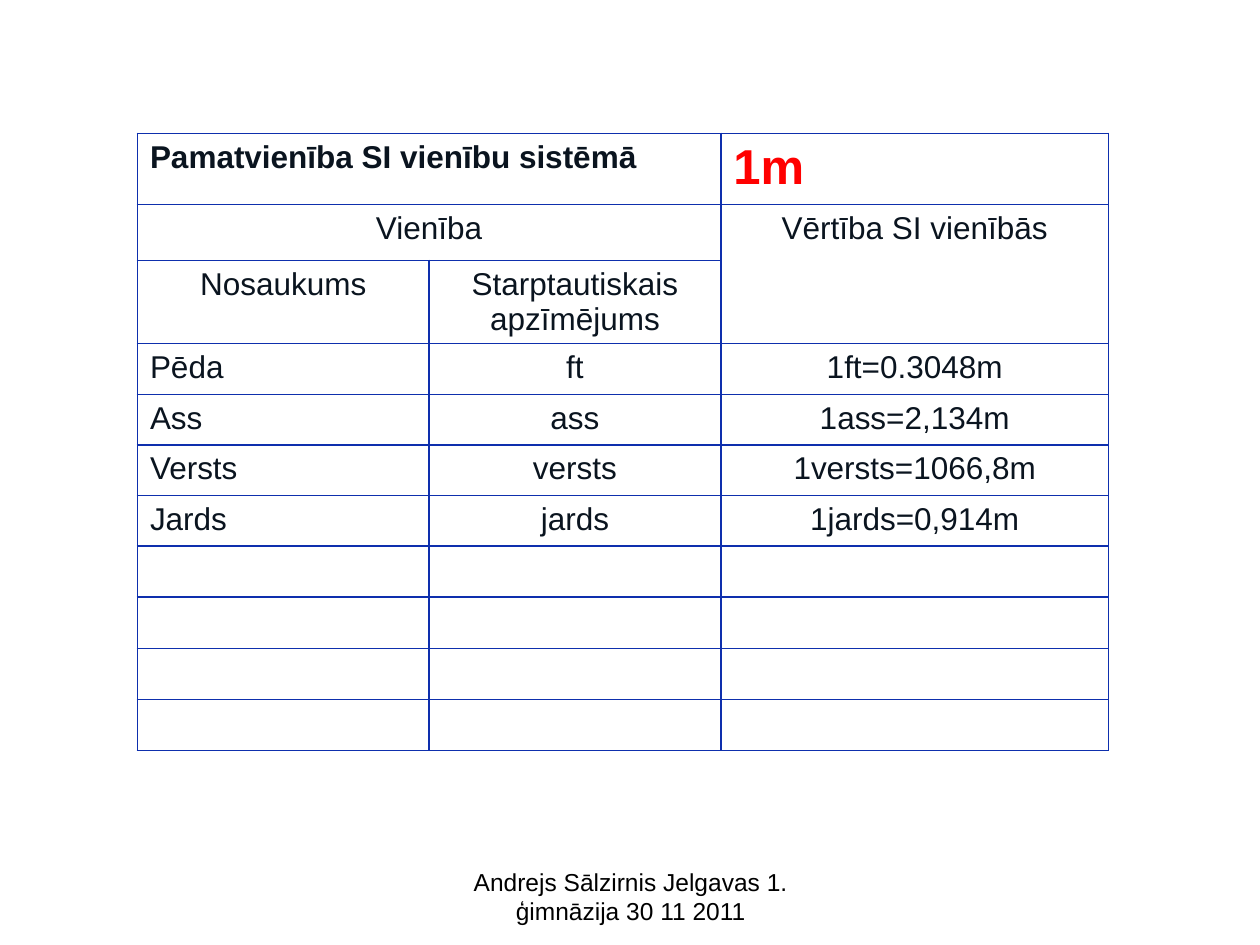
from typing import NamedTuple

from lxml.etree import SubElement
from pptx import Presentation
from pptx.dml.color import RGBColor
from pptx.enum.text import PP_ALIGN as Align
from pptx.oxml.ns import qn
from pptx.util import Cm, Pt

FONT = "Arial"
INK, RED, BLUE, WHITE, BLACK = "0A141F", "FF0000", "0E2FAD", "FFFFFF", "000000"
COL_WIDTHS = (5.88, 5.88, 7.82)
BODY_ROWS = 8
ROW_HEIGHTS = (1.43, 1.13, 1.68) + (1.02,) * BODY_ROWS
FIRST_BODY_ROW = len(ROW_HEIGHTS) - BODY_ROWS


class Entry(NamedTuple):
    row: int
    col: int
    text: str
    align: Align = Align.CENTER
    size: int = 18
    color: str = INK
    bold: bool = False
    rows: int = 1
    cols: int = 1


HEADINGS = [
    Entry(0, 0, "Pamatvienība SI vienību sistēmā", Align.LEFT, bold=True, cols=2),
    Entry(0, 2, "1m", Align.LEFT, 28, RED, True),
    Entry(1, 0, "Vienība", cols=2),
    Entry(1, 2, "Vērtība SI vienībās", rows=2),
    Entry(2, 0, "Nosaukums"),
    Entry(2, 1, "Starptautiskais apzīmējums"),
]
UNITS = [
    ("Pēda", "ft", "1ft=0.3048m"),
    ("Ass", "ass", "1ass=2,134m"),
    ("Versts", "versts", "1versts=1066,8m"),
    ("Jards", "jards", "1jards=0,914m"),
]


def rgb(color: str) -> RGBColor:
    return RGBColor.from_string(color)


def write(tf, text: str, align: Align, size: int, color: str, bold: bool = False) -> None:
    tf.text = text
    p = tf.paragraphs[0]
    p.alignment = align
    font = p.runs[0].font
    font.name, font.size, font.bold = FONT, Pt(size), bold
    font.color.rgb = rgb(color)


def style_cell(cell) -> None:
    """Draw all four borders, then fill the cell (the order the schema needs)."""
    tc_pr = cell._tc.get_or_add_tcPr()
    for side in ("lnL", "lnR", "lnT", "lnB"):
        ln = SubElement(tc_pr, qn(f"a:{side}"), w=str(Pt(1)))
        SubElement(SubElement(ln, qn("a:solidFill")), qn("a:srgbClr"), val=BLUE)
    cell.fill.solid()
    cell.fill.fore_color.rgb = rgb(WHITE)


def add_units_table(s, entries: list[Entry]) -> None:
    table = s.shapes.add_table(len(ROW_HEIGHTS), len(COL_WIDTHS), Cm(2.77), Cm(2.69),
                               Cm(sum(COL_WIDTHS)), Cm(sum(ROW_HEIGHTS))).table
    table.first_row = table.horz_banding = False
    for column, width in zip(table.columns, COL_WIDTHS):
        column.width = Cm(width)
    for row, height in zip(table.rows, ROW_HEIGHTS):
        row.height = Cm(height)
    for cell in table.iter_cells():
        style_cell(cell)
    for e in entries:
        cell = table.cell(e.row, e.col)
        if e.rows > 1 or e.cols > 1:
            cell.merge(table.cell(e.row + e.rows - 1, e.col + e.cols - 1))
        write(cell.text_frame, e.text, e.align, e.size, e.color, e.bold)


def add_footer(s, text: str) -> None:
    tf = s.shapes.add_textbox(Cm(8.69), Cm(17.35), Cm(8.05), Cm(1.32)).text_frame
    tf.word_wrap = True
    write(tf, text, Align.CENTER, 14, BLACK)


def main() -> None:
    prs = Presentation()
    prs.slide_width, prs.slide_height = Cm(25.4), Cm(19.05)
    s = prs.slides.add_slide(prs.slide_layouts[6])
    body = [Entry(row, col, text, Align.CENTER if col else Align.LEFT)
            for row, unit in enumerate(UNITS, FIRST_BODY_ROW)
            for col, text in enumerate(unit)]
    add_units_table(s, HEADINGS + body)
    add_footer(s, "Andrejs Sālzirnis Jelgavas 1. ģimnāzija 30 11 2011")
    prs.save("out.pptx")


if __name__ == "__main__":
    main()
